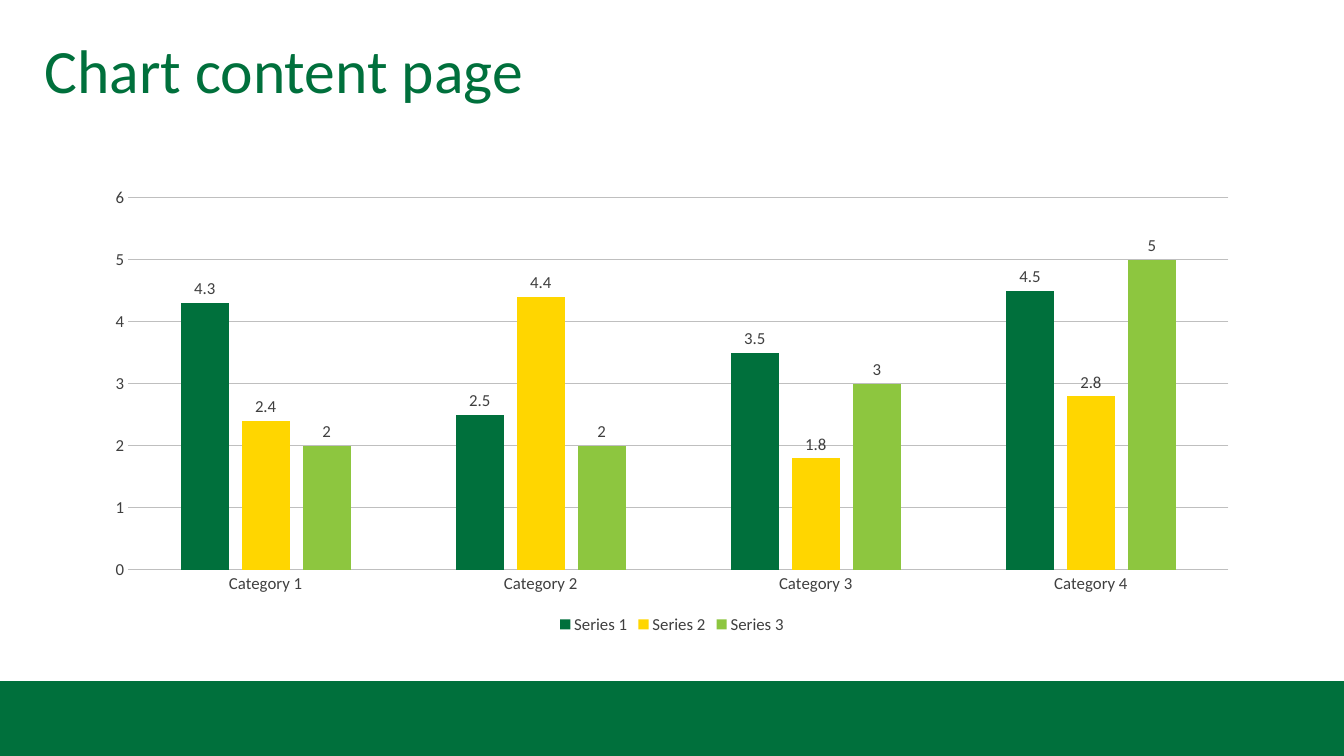
from pptx import Presentation
from pptx.chart.data import CategoryChartData
from pptx.dml.color import RGBColor
from pptx.enum.chart import XL_CHART_TYPE, XL_LABEL_POSITION, XL_LEGEND_POSITION, XL_TICK_MARK
from pptx.enum.shapes import MSO_SHAPE
from pptx.enum.text import MSO_ANCHOR, PP_ALIGN
from pptx.util import Inches, Pt

COLUMNS = XL_CHART_TYPE.COLUMN_CLUSTERED
OUTSIDE = XL_LABEL_POSITION.OUTSIDE_END
BOTTOM = XL_LEGEND_POSITION.BOTTOM
NO_TICK = XL_TICK_MARK.NONE
RECT = MSO_SHAPE.RECTANGLE
MIDDLE = MSO_ANCHOR.MIDDLE
LEFT = PP_ALIGN.LEFT

GREEN, YELLOW, LIME = "00703C", "FFD600", "8DC63F"
TEXT, GRID = "3F3F3F", "BFBFBF"

CATEGORIES = [f"Category {n}" for n in range(1, 5)]
SERIES = [
    ("Series 1", (4.3, 2.5, 3.5, 4.5), GREEN),
    ("Series 2", (2.4, 4.4, 1.8, 2.8), YELLOW),
    ("Series 3", (2, 2, 3, 5), LIME),
]


def rgb(value):
    return RGBColor.from_string(value)


def apply(target, formats):
    for name, value in formats.items():
        setattr(target, name, value)


class Deck:
    COLS, ROWS = 160, 90
    FONT = "Calibri"

    def __init__(self, width, height):
        self.prs = Presentation()
        apply(self.prs, {"slide_width": Inches(width), "slide_height": Inches(height)})
        self.s = self.prs.slides.add_slide(self.prs.slide_layouts[6])

    def box(self, col, row, cols, rows):
        dx = self.prs.slide_width / self.COLS
        dy = self.prs.slide_height / self.ROWS
        return [round(v) for v in (col * dx, row * dy, cols * dx, rows * dy)]

    def style(self, font, size, color):
        apply(font, {"name": self.FONT, "size": Pt(size), "bold": False})
        font.color.rgb = rgb(color)

    def bar(self, place, color):
        sp = self.s.shapes.add_shape(RECT, *self.box(*place))
        sp.shadow.inherit = False
        sp.fill.solid()
        sp.fill.fore_color.rgb = rgb(color)
        sp.line.fill.background()

    def title(self, place, text, size, color):
        tf = self.s.shapes.add_textbox(*self.box(*place)).text_frame
        apply(tf, {"word_wrap": True, "vertical_anchor": MIDDLE})
        p = tf.paragraphs[0]
        apply(p, {"alignment": LEFT, "line_spacing": 0.9})
        r = p.add_run()
        r.text = text
        self.style(r.font, size, color)

    def column_chart(self, place, categories, series, size):
        data = CategoryChartData()
        data.categories = categories
        for name, values, _ in series:
            data.add_series(name, values)
        chart = self.s.shapes.add_chart(COLUMNS, *self.box(*place), data).chart
        apply(chart, {"has_title": False, "has_legend": True})
        self.style(chart.font, 10, TEXT)
        apply(chart.legend, {"position": BOTTOM, "include_in_layout": False})
        self.style(chart.legend.font, size, TEXT)

        for axis in (chart.category_axis, chart.value_axis):
            apply(axis, {"major_tick_mark": NO_TICK, "minor_tick_mark": NO_TICK})
            axis.format.line.fill.background()
            self.style(axis.tick_labels.font, size, TEXT)
        apply(chart.value_axis, {"minimum_scale": 0, "maximum_scale": 6,
                                 "major_unit": 1, "has_major_gridlines": True})
        grid = chart.value_axis.major_gridlines.format.line
        grid.color.rgb = rgb(GRID)
        grid.width = Pt(0.75)

        plot = chart.plots[0]
        apply(plot, {"gap_width": 219, "overlap": -27, "vary_by_categories": False})
        for ser, (_, _, color) in zip(plot.series, series):
            ser.format.fill.solid()
            ser.format.fill.fore_color.rgb = rgb(color)
            labels = ser.data_labels
            apply(labels, {"show_value": True, "position": OUTSIDE})
            self.style(labels.font, size, TEXT)


def main():
    deck = Deck(13.33, 7.5)
    deck.bar((0, 81.1, 160, 8.9), GREEN)
    deck.column_chart((11, 21.25, 138, 54.75), CATEGORIES, SERIES, 12)
    deck.title((4.1, 0, 155.9, 17.4), "Chart content page", 44, GREEN)
    deck.prs.save("out.pptx")


if __name__ == "__main__":
    main()
